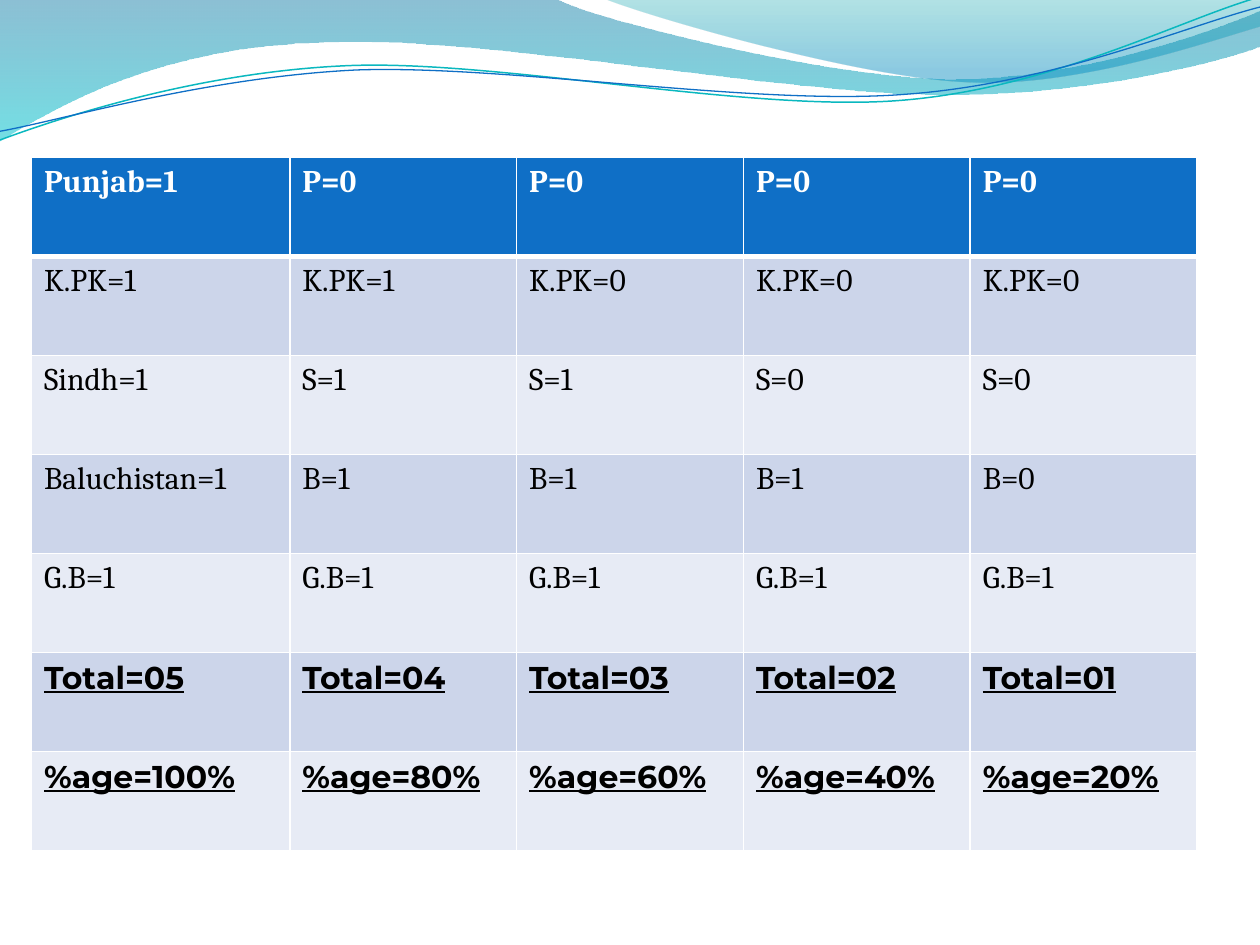
from math import cos, radians, sin
from lxml.etree import SubElement
from pptx import Presentation
from pptx.dml.color import RGBColor
from pptx.oxml import parse_xml
from pptx.oxml.ns import nsdecls, qn
from pptx.util import Pt

WHITE = RGBColor(0xFF, 0xFF, 0xFF)
BLACK = RGBColor(0, 0, 0)
BLUE = RGBColor(0x0F, 0x6F, 0xC6)
TEAL = RGBColor(0x0A, 0xB8, 0xBF)
DARK = RGBColor(0xCC, 0xD5, 0xEA)
PALE = RGBColor(0xE7, 0xEB, 0xF5)
SEA = RGBColor(0x00, 0x74, 0xA1)
AQUA = RGBColor(0x00, 0xC6, 0xCF)
JADE = RGBColor(0x00, 0xA1, 0xA9)
SKY = RGBColor(0x00, 0x8B, 0xBF)

WAVE = [[(0, 0)], [(317, -1)], [(343, 12), (478, 45), (546, 45)],
        [(614, 45), (690, 19), (720, 6)], [(721, 26)],
        [(708, 32), (626, 55), (537, 54)], [(448, 54), (275, 20), (185, 24)],
        [(93, 26), (33, 60), (-1, 81)]]
CREST = [[(345, -1)], [(366, 8), (491, 45), (554, 47)],
         [(616, 50), (692, 23), (720, 15)], [(720, 0)]]
UPPER = [[(0, 80)], [(35, 67), (114, 41), (199, 37.5)],
         [(284, 34), (427, 64), (513, 57.5)], [(600, 51), (675, 11), (719, -1.5)]]
LOWER = [[(0, 75)], [(34, 69), (118, 44), (204, 40)],
         [(290, 37), (430, 60.5), (516, 54)], [(602, 48), (677, 15), (720, 4)]]
TILT = -2.7
FINE = 100

ROWS = [
    ["Punjab=1"] + ["P=0"] * 4,
    ["K.PK=1"] * 2 + ["K.PK=0"] * 3,
    ["Sindh=1", "S=1", "S=1", "S=0", "S=0"],
    ["Baluchistan=1"] + ["B=1"] * 3 + ["B=0"],
    ["G.B=1"] * 5,
    [f"Total=0{count}" for count in range(5, 0, -1)],
    [f"%age={share}%" for share in range(100, 0, -20)],
]


def turn(path, angle, hub):
    """Rotate a path clockwise about a hub."""
    c, s = cos(radians(angle)), sin(radians(angle))
    return [[(hub[0] + (x - hub[0]) * c - (y - hub[1]) * s,
              hub[1] + (x - hub[0]) * s + (y - hub[1]) * c) for x, y in part]
            for part in path]


def draw(slide, path, left, top, close):
    """Add a freeform whose parts of three points are cubic curves."""
    points = [(x * FINE, y * FINE) for part in path for x, y in part]
    pen = slide.shapes.build_freeform(*points[0], scale=Pt(1) / FINE)
    pen.add_line_segments(points[1:], close=close)
    shape = pen.convert_to_shape(Pt(left), Pt(top))
    shape.shadow.inherit = False
    lines = iter(list(shape.element.iter(qn("a:lnTo"))))
    for part in path[1:]:
        group = [next(lines) for _ in part]
        if len(group) == 3:
            curve = group[0].makeelement(qn("a:cubicBezTo"))
            group[0].addprevious(curve)
            for line in group:
                curve.append(line[0])
                line.getparent().remove(line)
    return shape


def add_wave(slide, path, stops, left, top):
    """Add a filled wave with a see-through vertical gradient."""
    shape = draw(slide, path, left, top, True)
    shape.line.fill.background()
    shape.fill.gradient()
    shape.fill.gradient_angle = 270
    for stop, (place, color, alpha) in zip(shape.fill.gradient_stops, stops):
        stop.position, stop.color.rgb = place, color
    for node, (place, color, alpha) in zip(shape.element.iter(qn("a:srgbClr")), stops):
        SubElement(node, qn("a:alpha"), val=str(alpha * 1000))


def add_curve(slide, path, color, width, hub, left, top):
    """Add a thin tilted curve."""
    shape = draw(slide, turn(path, -TILT, hub), left, top, False)
    shape.rotation = TILT
    shape.fill.background()
    shape.line.color.rgb = color
    shape.line.width = Pt(width)


def add_banner(slide, left, top):
    """Add the waves and curves across the top."""
    add_wave(slide, WAVE, [(0, SEA, 45), (1, AQUA, 55)], left, top)
    add_wave(slide, CREST, [(0, JADE, 30), (0.8, SKY, 45)], left, top)
    add_curve(slide, UPPER, TEAL, 0.85, (359.3, 41.4), left, top)
    add_curve(slide, LOWER, BLUE, 0.75, (359.6, 42.5), left, top)


def set_edges(cell, row):
    """Give a cell white borders, thick below the header."""
    widths = {"L": 1, "R": 1, "T": 3 if row == 1 else 1, "B": 3 if row == 0 else 1}
    props = cell._tc.get_or_add_tcPr()
    for spot, (side, width) in enumerate(widths.items()):
        props.insert(spot, parse_xml(
            f'<a:ln{side} {nsdecls("a")} w="{Pt(width)}"><a:solidFill>'
            f'<a:srgbClr val="{WHITE}"/></a:solidFill></a:ln{side}>'))


def add_grid(slide, left, top, width, height):
    """Add the table of provinces and totals."""
    table = slide.shapes.add_table(
        len(ROWS), 5, Pt(left), Pt(top), Pt(width), Pt(height)).table
    first = 147.6
    for col, column in enumerate(table.columns):
        column.width = Pt((width - first) / 4 if col else first)
    for row, texts in enumerate(ROWS):
        table.rows[row].height = Pt(height / len(ROWS))
        head, sums = row == 0, row >= 5
        for col, text in enumerate(texts):
            cell = table.cell(row, col)
            cell.fill.solid()
            cell.fill.fore_color.rgb = BLUE if head else DARK if row % 2 else PALE
            set_edges(cell, row)
            cell.text_frame.text = text
            font = cell.text_frame.paragraphs[0].runs[0].font
            font.name = "Montserrat" if sums else "Cambria"
            font.size = Pt(18)
            font.bold = head or sums
            font.underline = sums
            font.color.rgb = WHITE if head else BLACK


def main():
    """Build and save the slide."""
    deck = Presentation()
    deck.slide_width, deck.slide_height = Pt(720), Pt(540)
    slide = deck.slides.add_slide(deck.slide_layouts[6])
    add_banner(slide, 0, 0)
    add_grid(slide, 18, 90, 666, 396)
    deck.save("out.pptx")


if __name__ == "__main__":
    main()
